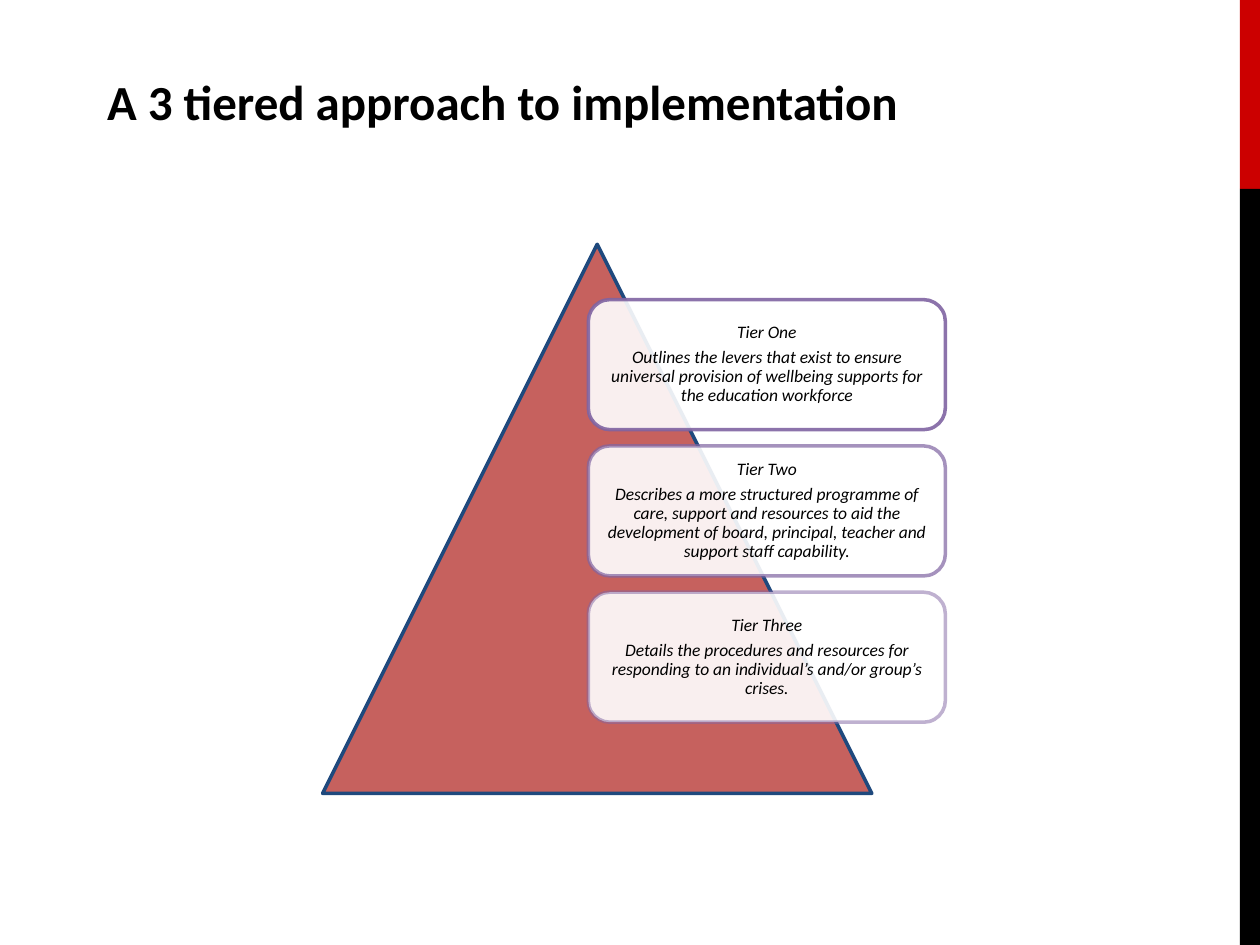
from dataclasses import dataclass
from typing import NamedTuple

from lxml.etree import SubElement
from pptx import Presentation
from pptx.dml.color import RGBColor as RGB
from pptx.enum.shapes import MSO_SHAPE as Shape
from pptx.enum.text import MSO_ANCHOR as Anchor, MSO_AUTO_SIZE as AutoSize, PP_ALIGN as Align
from pptx.oxml.ns import qn
from pptx.util import Pt


@dataclass(frozen=True)
class Theme:
    font: str = "Calibri"
    title_size: float = 28
    tier_size: float = 10
    text: RGB = RGB(0, 0, 0)
    red: RGB = RGB(0xCC, 0, 0)
    black: RGB = RGB(0, 0, 0)
    white: RGB = RGB(0xFF, 0xFF, 0xFF)
    pyramid: RGB = RGB(0xC0, 0x50, 0x4D)
    pyramid_line: RGB = RGB(0x1F, 0x49, 0x7D)
    tier_line: RGB = RGB(0x80, 0x64, 0xA2)
    line_width: float = 2


class Box(NamedTuple):
    left: float
    top: float
    width: float
    height: float


class Tier(NamedTuple):
    name: str
    text: str
    line_opacity: int


THEME = Theme()
TIERS = [
    Tier("Tier One", "Outlines the levers that exist to ensure universal provision of "
         "wellbeing supports for the education workforce", 90),
    Tier("Tier Two", "Describes a more structured programme of care, support and resources "
         "to aid the development of board, principal, teacher and support staff capability.", 70),
    Tier("Tier Three", "Details the procedures and resources for responding to an "
         "individual’s and/or group’s crises.", 50),
]
FIRST_TIER = Box(336.2, 171.2, 204, 74.3)
TIER_STEP = 83.6


def set_attrs(obj, values: dict) -> None:
    for name, value in values.items():
        setattr(obj, name, value)


def set_opacity(fill, percent: int) -> None:
    color = fill._xPr.find(qn("a:solidFill"))[0]
    SubElement(color, qn("a:alpha"), val=str(percent * 1000))


def add_shape(slide, kind: Shape, box: Box, fill: RGB, opacity: int = 100,
              line: RGB | None = None, line_opacity: int = 100):
    sp = slide.shapes.add_shape(kind, *map(Pt, box))
    sp.shadow.inherit = False
    sp.fill.solid()
    sp.fill.fore_color.rgb = fill
    if opacity < 100:
        set_opacity(sp.fill, opacity)
    if line is None:
        sp.line.fill.background()
    else:
        sp.line.color.rgb = line
        sp.line.width = Pt(THEME.line_width)
        if line_opacity < 100:
            set_opacity(sp.line.fill, line_opacity)
    return sp


def format_font(font, size: float, **style: bool) -> None:
    set_attrs(font, {"name": THEME.font, "size": Pt(size), **style})
    font.color.rgb = THEME.text


def add_title(slide, text: str, box: Box) -> None:
    sp = slide.shapes.title
    set_attrs(sp, dict(zip(box._fields, map(Pt, box))))
    tf = sp.text_frame
    set_attrs(tf, {"text": text, "word_wrap": True, "vertical_anchor": Anchor.TOP,
                   "auto_size": AutoSize.NONE})
    p = tf.paragraphs[0]
    p.alignment = Align.LEFT
    format_font(p.runs[0].font, THEME.title_size, bold=True)


def add_tier(slide, tier: Tier, box: Box) -> None:
    sp = add_shape(slide, Shape.ROUNDED_RECTANGLE, box, THEME.white, 90,
                   THEME.tier_line, tier.line_opacity)
    tf = sp.text_frame
    margins = {f"margin_{side}": Pt(3) for side in ("left", "top", "right", "bottom")}
    set_attrs(tf, {"word_wrap": True, "vertical_anchor": Anchor.MIDDLE, **margins})
    tf.text = f"{tier.name}\n{tier.text}"
    for p in tf.paragraphs:
        set_attrs(p, {"alignment": Align.CENTER, "line_spacing": 0.9, "space_after": Pt(3.5)})
        format_font(p.runs[0].font, THEME.tier_size, italic=True)


def main() -> None:
    prs = Presentation()
    set_attrs(prs, {"slide_width": Pt(720), "slide_height": Pt(540)})
    slide = prs.slides.add_slide(prs.slide_layouts[5])

    # Side band
    add_shape(slide, Shape.RECTANGLE, Box(708.5, 0, 11.5, 108), THEME.red)
    add_shape(slide, Shape.RECTANGLE, Box(708.5, 108, 11.5, 432), THEME.black)

    # Pyramid with its tiers
    add_shape(slide, Shape.ISOSCELES_TRIANGLE, Box(184.4, 139.6, 313.8, 313.8),
              THEME.pyramid, 90, THEME.pyramid_line)
    for i, tier in enumerate(TIERS):
        add_tier(slide, tier, FIRST_TIER._replace(top=FIRST_TIER.top + i * TIER_STEP))

    # Title
    add_title(slide, "A 3 tiered approach to implementation", Box(54, 37.5, 612, 63))

    prs.save("out.pptx")


if __name__ == "__main__":
    main()
